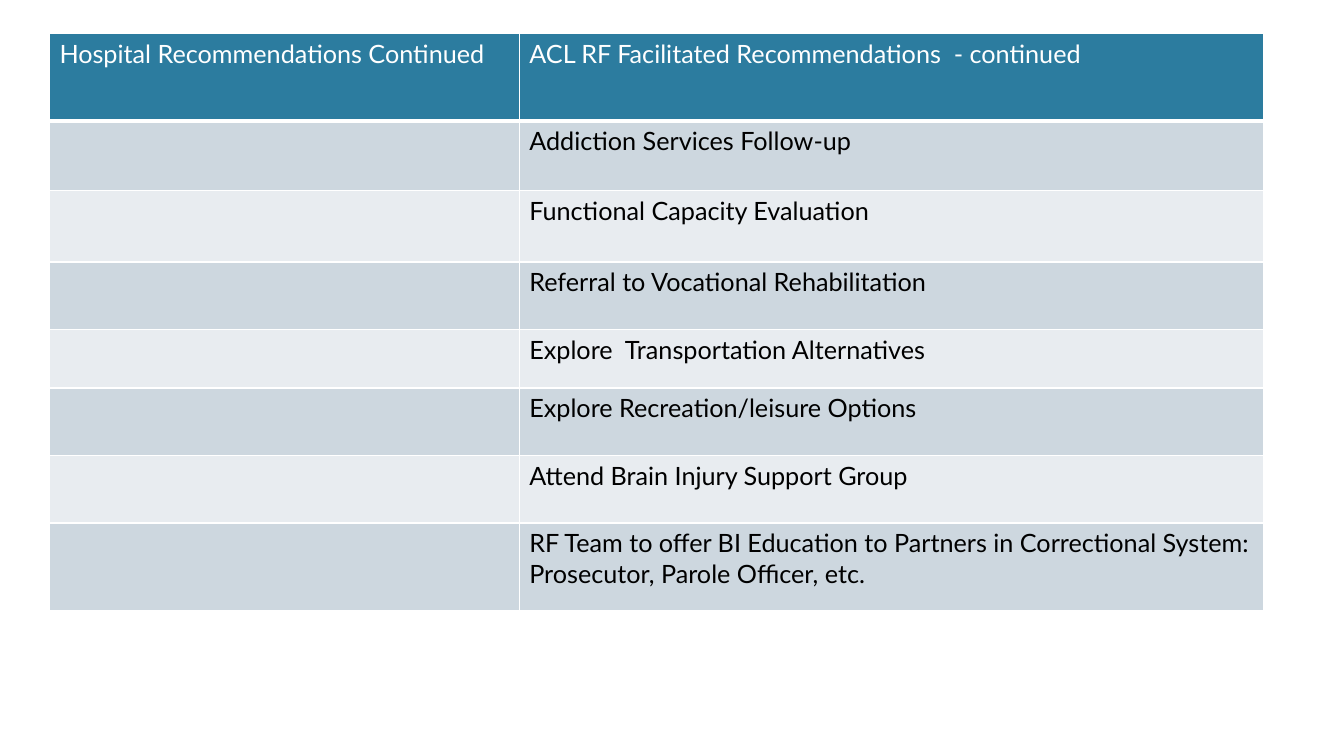
import pptx
import pptx.util
import pptx.dml.color
import pptx.oxml
import pptx.oxml.ns

COLORS = {
    "header": "2C7C9F",
    "odd_row": "CDD7DF",
    "even_row": "E8ECF0",
    "border": "FFFFFF",
    "header_text": "FFFFFF",
    "body_text": "000000",
}
COLUMN_WIDTHS = [4.66, 7.38]
ROW_HEIGHTS = [0.87, 0.69, 0.71, 0.67, 0.58, 0.67, 0.67, 0.87]
RECOMMENDATIONS = [
    ("Hospital Recommendations Continued", "ACL RF Facilitated Recommendations  - continued"),
    ("", "Addiction Services Follow-up"),
    ("", "Functional Capacity Evaluation"),
    ("", "Referral to Vocational Rehabilitation"),
    ("", "Explore  Transportation Alternatives"),
    ("", "Explore Recreation/leisure Options"),
    ("", "Attend Brain Injury Support Group"),
    ("", "RF Team to offer BI Education to Partners in Correctional System: "
         "Prosecutor, Parole Officer, etc."),
]


def rgb(name):
    return pptx.dml.color.RGBColor.from_string(COLORS[name])


def add_border(cell, side, points):
    line = pptx.oxml.parse_xml(
        f'<a:{side} {pptx.oxml.ns.nsdecls("a")} w="{pptx.util.Pt(points)}"><a:solidFill>'
        f'<a:srgbClr val="{COLORS["border"]}"/></a:solidFill></a:{side}>'
    )
    cell._tc.get_or_add_tcPr().append(line)


# Slide
deck = pptx.Presentation()
deck.slide_width = pptx.util.Inches(13.33)
deck.slide_height = pptx.util.Inches(7.5)
slide = deck.slides.add_slide(deck.slide_layouts[6])

# Table grid
recommendations = slide.shapes.add_table(
    len(ROW_HEIGHTS), len(COLUMN_WIDTHS),
    pptx.util.Inches(0.49), pptx.util.Inches(0.33),
    pptx.util.Inches(sum(COLUMN_WIDTHS)), pptx.util.Inches(sum(ROW_HEIGHTS)),
).table
for column, width in zip(recommendations.columns, COLUMN_WIDTHS):
    column.width = pptx.util.Inches(width)
for row, height in zip(recommendations.rows, ROW_HEIGHTS):
    row.height = pptx.util.Inches(height)

# Cells: header row, then alternating bands
for row_index, entries in enumerate(RECOMMENDATIONS):
    is_header = row_index == 0
    band = "header" if is_header else "odd_row" if row_index % 2 else "even_row"
    for column_index, entry in enumerate(entries):
        cell = recommendations.cell(row_index, column_index)
        for side in ("lnL", "lnR", "lnT", "lnB"):
            below_header = (row_index, side) in ((0, "lnB"), (1, "lnT"))
            add_border(cell, side, 3 if below_header else 1)
        cell.fill.solid()
        cell.fill.fore_color.rgb = rgb(band)
        if not entry:
            continue
        cell.text_frame.text = entry
        paragraph = cell.text_frame.paragraphs[0]
        paragraph.space_before = pptx.util.Pt(6)
        font = paragraph.runs[0].font
        font.name = "Lato"
        font.size = pptx.util.Pt(18)
        font.bold = False
        font.color.rgb = rgb("header_text" if is_header else "body_text")

deck.save("out.pptx")
